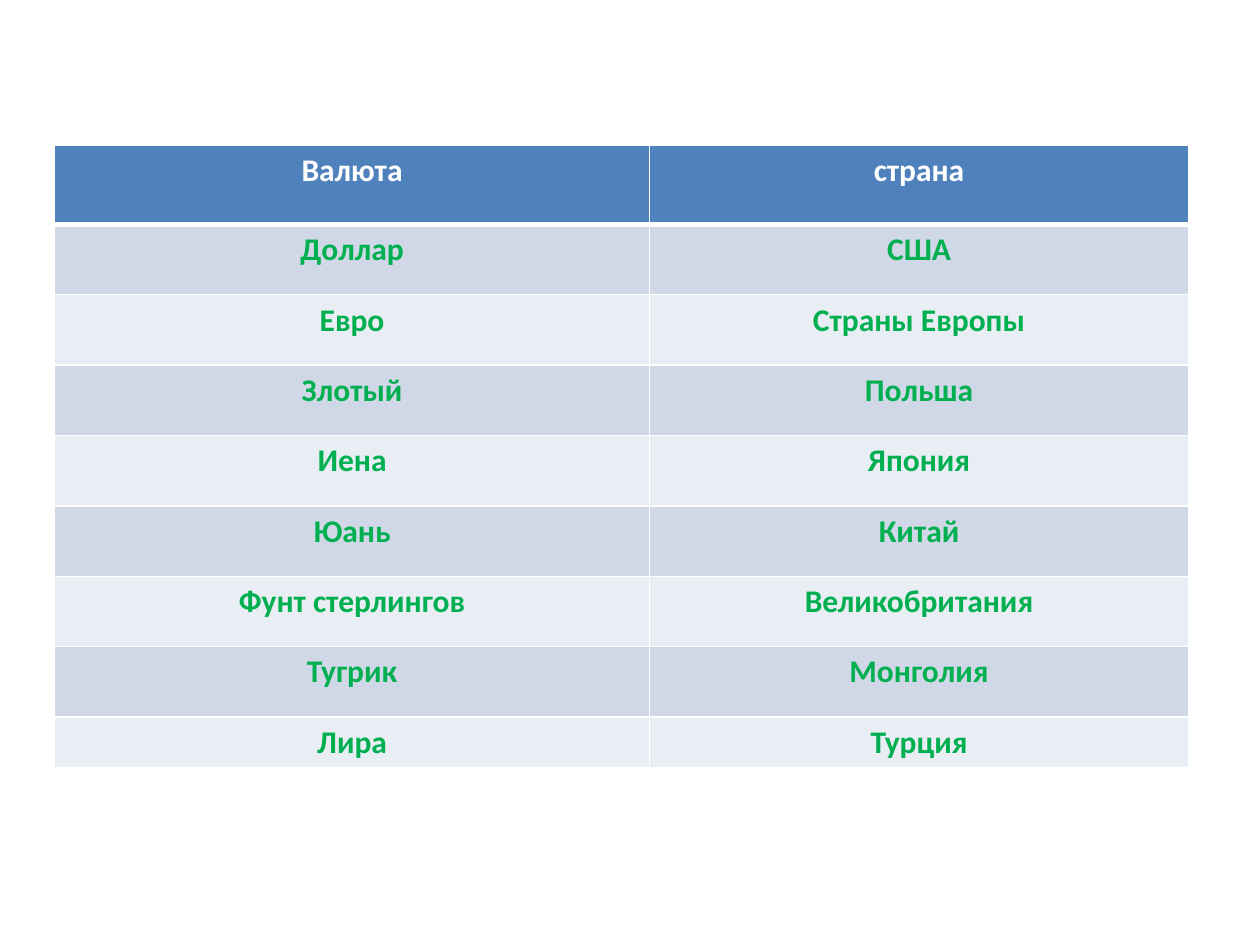
from pptx import Presentation
from pptx.dml.color import RGBColor
from pptx.enum.text import PP_ALIGN as Align
from pptx.oxml import parse_xml
from pptx.oxml.ns import nsdecls
from pptx.util import Pt


def rgb(code):
    return RGBColor.from_string(code)


def edge(cell, side, width):
    """Add a white border; call before the cell's fill is set."""
    cell._tc.get_or_add_tcPr().append(parse_xml(
        f'<a:{side} {nsdecls("a")} w="{Pt(width)}"><a:solidFill>'
        f'<a:srgbClr val="FFFFFF"/></a:solidFill></a:{side}>'))


deck = Presentation()
deck.slide_width, deck.slide_height = Pt(720), Pt(540)
slide = deck.slides.add_slide(deck.slide_layouts[6])

rows = [
    ("Валюта", "страна"),
    ("Доллар", "США"),
    ("Евро", "Страны Европы"),
    ("Злотый", "Польша"),
    ("Иена", "Япония"),
    ("Юань", "Китай"),
    ("Фунт стерлингов", "Великобритания"),
    ("Тугрик", "Монголия"),
    ("Лира", "Турция"),
]
widths = [340, 308]
heights = [45.2] + [40.25] * 7 + [26]

# Table grid
table = slide.shapes.add_table(len(rows), 2, Pt(31.2), Pt(83),
                               Pt(sum(widths)), Pt(sum(heights))).table
for col, width in zip(table.columns, widths):
    col.width = Pt(width)
for row, height in zip(table.rows, heights):
    row.height = Pt(height)

# Cells: blue header, then two alternating bands
for r, texts in enumerate(rows):
    head = r == 0
    back = "4F81BD" if head else ("E9EDF4", "D0D8E8")[r % 2]
    for c, text in enumerate(texts):
        cell = table.cell(r, c)
        edge(cell, "lnL", 1)
        edge(cell, "lnR", 1)
        edge(cell, "lnT", 3 if r == 1 else 1)
        edge(cell, "lnB", 3 if head else 1)
        cell.fill.solid()
        cell.fill.fore_color.rgb = rgb(back)
        cell.text = text
        para = cell.text_frame.paragraphs[0]
        para.alignment = Align.CENTER
        font = para.font
        font.name, font.size, font.bold = "Calibri", Pt(18), True
        font.color.rgb = rgb("FFFFFF" if head else "00B050")

deck.save("out.pptx")
